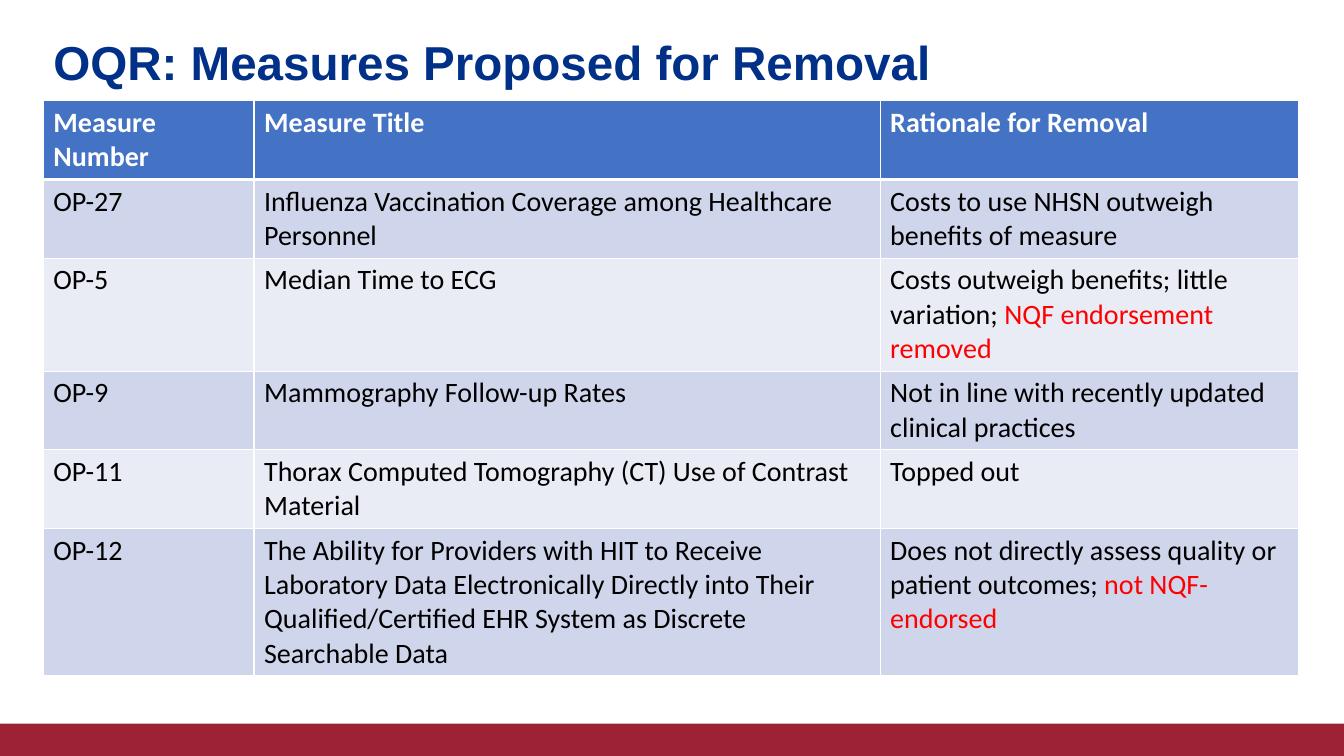
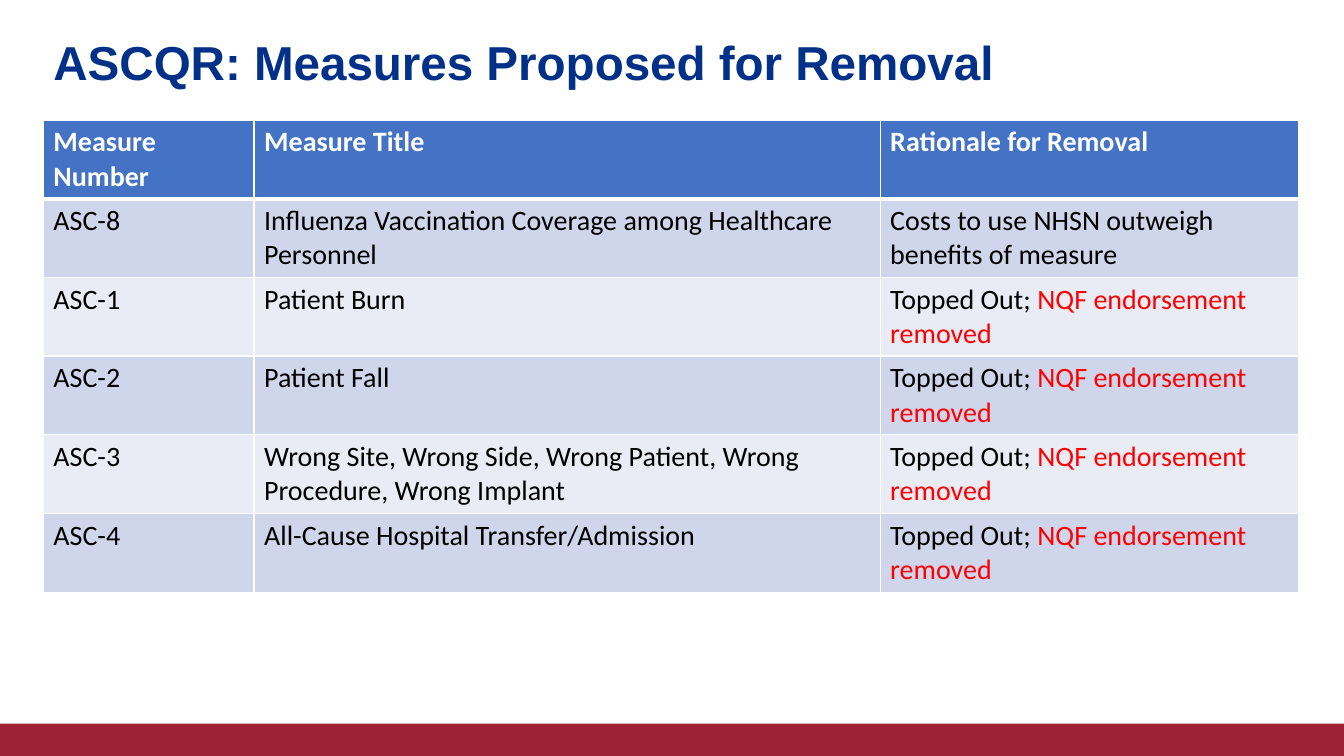
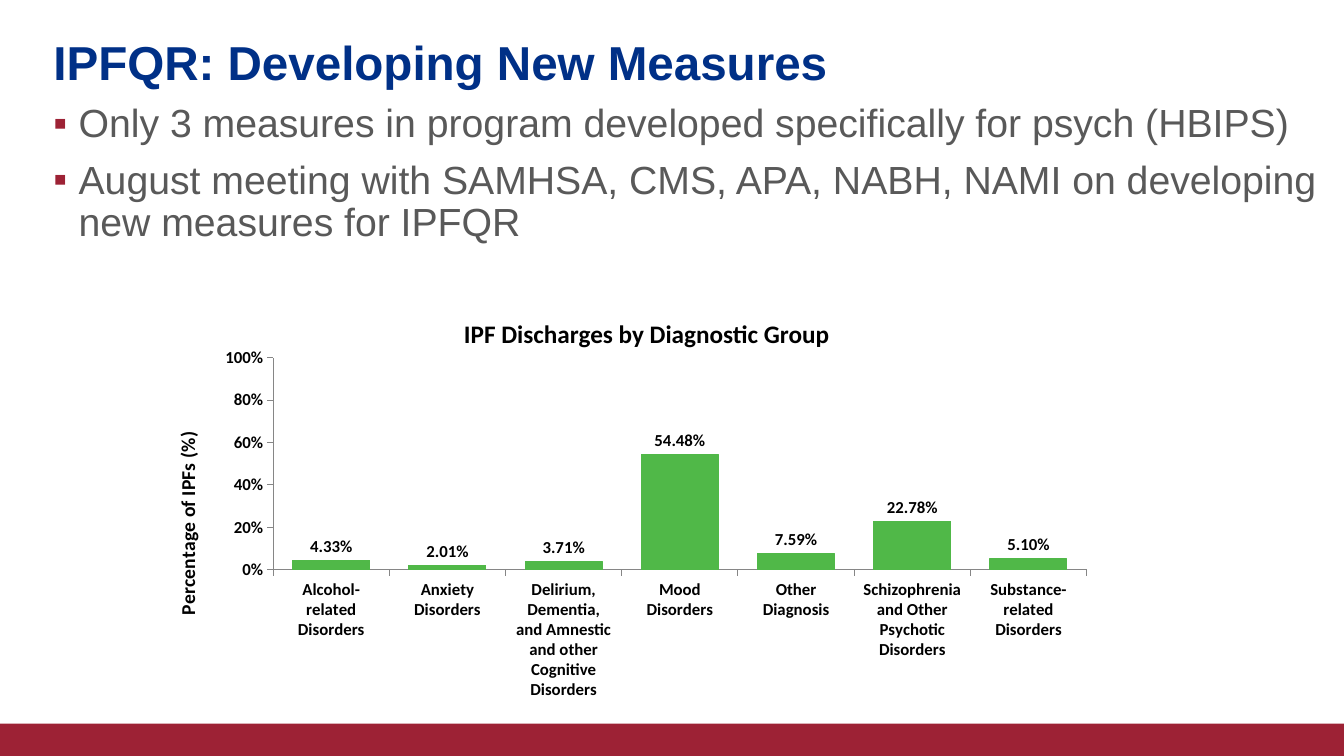
"""Build three slides on quality measures proposed for removal and development."""
from lxml import etree
from pptx import Presentation
from pptx.chart.data import CategoryChartData
from pptx.dml.color import RGBColor
from pptx.enum.chart import XL_CHART_TYPE as ChartType, XL_LABEL_POSITION as LabelPosition
from pptx.enum.chart import XL_TICK_MARK as TickMark
from pptx.enum.shapes import MSO_SHAPE as Shape
from pptx.enum.text import MSO_ANCHOR as Anchor, MSO_AUTO_SIZE as AutoSize, PP_ALIGN as Align
from pptx.oxml import parse_xml
from pptx.oxml.ns import nsdecls, qn
from pptx.util import Inches, Pt

COLORS = {
    "band": "9D2235", "title": "003087", "body": "595959", "header": "4472C4",
    "odd": "CFD5EA", "even": "E9EBF5", "white": "FFFFFF", "black": "000000",
    "alert": "FF0000", "bar": "50B848", "axis": "868686",
}
TITLE_ONLY, TITLE_AND_BODY = 5, 1
LEFT = 0.43
COLUMN_WIDTHS = (2.09, 6.21, 4.15)
ROW_HEIGHT = 0.41
HEADINGS = ("Measure Number", "Measure Title", "Rationale for Removal")
FLU_TITLE = "Influenza Vaccination Coverage among Healthcare Personnel"
FLU_REASON = "Costs to use NHSN outweigh benefits of measure"
TOPPED_OUT = ("Topped Out; ", "NQF endorsement removed")

OQR_ROWS = [
    ("OP-27", FLU_TITLE, FLU_REASON),
    ("OP-5", "Median Time to ECG",
     ("Costs outweigh benefits; little variation; ", "NQF endorsement removed")),
    ("OP-9", "Mammography Follow-up Rates", "Not in line with recently updated clinical practices"),
    ("OP-11", "Thorax Computed Tomography (CT) Use of Contrast Material", "Topped out"),
    ("OP-12",
     "The Ability for Providers with HIT to Receive Laboratory Data Electronically Directly "
     "into Their Qualified/Certified EHR System as Discrete Searchable Data",
     ("Does not directly assess quality or patient outcomes; ", "not NQF-endorsed")),
]
ASCQR_ROWS = [
    ("ASC-8", FLU_TITLE, FLU_REASON),
    ("ASC-1", "Patient Burn", TOPPED_OUT),
    ("ASC-2", "Patient Fall", TOPPED_OUT),
    ("ASC-3", "Wrong Site, Wrong Side, Wrong Patient, Wrong Procedure, Wrong Implant", TOPPED_OUT),
    ("ASC-4", "All-Cause Hospital Transfer/Admission", TOPPED_OUT),
]
DISCHARGES = {
    "Alcohol-\nrelated\nDisorders": 0.0433,
    "Anxiety\nDisorders": 0.0201,
    "Delirium,\nDementia,\nand Amnestic\nand other\nCognitive\nDisorders": 0.0371,
    "Mood\nDisorders": 0.5448,
    "Other\nDiagnosis": 0.0759,
    "Schizophrenia\nand Other\nPsychotic\nDisorders": 0.2278,
    "Substance-\nrelated\nDisorders": 0.051,
}


def rgb(name):
    """Return the named colour."""
    return RGBColor.from_string(COLORS[name])


def style(font, size, color, name="Calibri", bold=False):
    """Set the look of a font."""
    font.size, font.name, font.bold = Pt(size), name, bold
    font.color.rgb = rgb(color)


def place(shape, left, top, width, height):
    """Move and size a shape, in inches."""
    shape.left, shape.top = Inches(left), Inches(top)
    shape.width, shape.height = Inches(width), Inches(height)


class Deck:
    """Hold the presentation, its style and the current slide."""

    def __init__(self):
        """Start an empty wide presentation."""
        self.deck = Presentation()
        self.deck.slide_width, self.deck.slide_height = Inches(13.33), Inches(7.5)
        self.page = None

    def add_page(self, layout, title):
        """Add a slide with the bottom band and a title."""
        self.page = self.deck.slides.add_slide(self.deck.slide_layouts[layout])
        band = self.page.shapes.add_shape(
            Shape.RECTANGLE, 0, Inches(7.18), self.deck.slide_width, Inches(0.32))
        band.shadow.inherit = False
        band.fill.solid()
        band.fill.fore_color.rgb = rgb("band")
        band.line.fill.background()
        box = self.page.shapes.title
        place(box, LEFT, 0.32, 11.5, 0.65)
        frame = box.text_frame
        frame.text = title
        frame.auto_size, frame.vertical_anchor = AutoSize.NONE, Anchor.MIDDLE
        para = frame.paragraphs[0]
        para.alignment, para.line_spacing = Align.LEFT, 0.9
        style(para.font, 34, "title", "Arial", True)

    def add_bullets(self, lines):
        """Fill the body placeholder with square bullets."""
        box = self.page.placeholders[1]
        place(box, LEFT, 0.98, 12.9, 1.98)
        frame = box.text_frame
        frame.auto_size = AutoSize.NONE
        frame.text = "\n".join(lines)
        for index, para in enumerate(frame.paragraphs):
            para.line_spacing = 0.9
            para.space_before = Pt(10 if index else 0)
            props = para._p.get_or_add_pPr()
            props.set("marL", str(Inches(0.25)))
            props.set("indent", str(Inches(-0.25)))
            color = etree.SubElement(props, qn("a:buClr"))
            etree.SubElement(color, qn("a:srgbClr"), val=COLORS["band"])
            etree.SubElement(props, qn("a:buFont"), typeface="Arial")
            etree.SubElement(props, qn("a:buChar"), char="▪")
            style(para.font, 28, "body", "Arial")

    def add_measures(self, top, rows):
        """Add a table of measures under the shared headings."""
        grid = [HEADINGS, *rows]
        table = self.page.shapes.add_table(
            len(grid), len(HEADINGS), Inches(LEFT), Inches(top),
            Inches(sum(COLUMN_WIDTHS)), Inches(ROW_HEIGHT * len(grid))).table
        for column, width in zip(table.columns, COLUMN_WIDTHS):
            column.width = Inches(width)
        for index, values in enumerate(grid):
            table.rows[index].height = Inches(ROW_HEIGHT)
            fill = ("odd" if index % 2 else "even") if index else "header"
            for cell, value in zip(table.rows[index].cells, values):
                self.fill_cell(cell, value, fill, index)

    def fill_cell(self, cell, value, fill, index):
        """Write one cell; the second part of a pair is an alert."""
        props = cell._tc.get_or_add_tcPr()
        for side in ("lnL", "lnR", "lnT", "lnB"):
            heavy = (index == 0 and side == "lnB") or (index == 1 and side == "lnT")
            line = etree.SubElement(props, qn(f"a:{side}"), w=str(Pt(3 if heavy else 1)))
            solid = etree.SubElement(line, qn("a:solidFill"))
            etree.SubElement(solid, qn("a:srgbClr"), val=COLORS["white"])
        cell.fill.solid()
        cell.fill.fore_color.rgb = rgb(fill)
        para = cell.text_frame.paragraphs[0]
        style(para.font, 20, "black" if index else "white", bold=index == 0)
        parts = (value,) if isinstance(value, str) else value
        for part, text in enumerate(parts):
            span = para.add_run()
            span.text = text
            if part:
                span.font.color.rgb = rgb("alert")

    def add_column_chart(self, values, axis_title):
        """Add a column chart of shares."""
        data = CategoryChartData(number_format="0.00%")
        data.categories = list(values)
        data.add_series("Series 1", list(values.values()))
        chart = self.page.shapes.add_chart(
            ChartType.COLUMN_CLUSTERED, Inches(1.45), Inches(3.35),
            Inches(9.47), Inches(3.75), data).chart
        chart.has_title = chart.has_legend = False
        style(chart.font, 10, "black", bold=True)
        for axis in (chart.category_axis, chart.value_axis):
            axis.has_major_gridlines = False
            axis.major_tick_mark, axis.minor_tick_mark = TickMark.OUTSIDE, TickMark.NONE
            axis.format.line.color.rgb = rgb("axis")
            axis.format.line.width = Pt(0.75)
            style(axis.tick_labels.font, 12, "black", bold=True)
        scale = chart.value_axis
        scale.minimum_scale, scale.maximum_scale, scale.major_unit = 0, 1, 0.2
        scale.tick_labels.number_format = "0%"
        scale.tick_labels.number_format_is_linked = False
        scale.axis_title.text_frame.text = axis_title
        style(scale.axis_title.text_frame.paragraphs[0].font, 14, "black", bold=True)
        plot = chart.plots[0]
        plot.gap_width, plot.overlap, plot.vary_by_categories = 51, 100, False
        series = plot.series[0]
        series.format.fill.solid()
        series.format.fill.fore_color.rgb = rgb("bar")
        series.format.line.color.rgb = rgb("bar")
        series.format.line.width = Pt(0.75)
        labels = series.data_labels
        labels.show_value, labels.position = True, LabelPosition.OUTSIDE_END
        labels.number_format, labels.number_format_is_linked = "0.00%", False
        style(labels.font, 12, "black", bold=True)
        self.set_plot_area(chart, x=0.133, y=0.053, w=0.852, h=0.561)

    def set_plot_area(self, chart, **sizes):
        """Fix the inner plot area as fractions of the chart."""
        modes = '<c:xMode val="edge"/><c:yMode val="edge"/>'
        places = "".join(f'<c:{key} val="{size}"/>' for key, size in sizes.items())
        area = chart._chartSpace.find(".//" + qn("c:plotArea"))
        for old in area.findall(qn("c:layout")):
            area.remove(old)
        area.insert(0, parse_xml(
            f'<c:layout {nsdecls("c")}><c:manualLayout><c:layoutTarget val="inner"/>'
            f"{modes}{places}</c:manualLayout></c:layout>"))

    def add_caption(self, text, left, top, width, height):
        """Add a centred bold caption."""
        box = self.page.shapes.add_textbox(
            Inches(left), Inches(top), Inches(width), Inches(height))
        box.text_frame.word_wrap = True
        box.text_frame.text = text
        para = box.text_frame.paragraphs[0]
        para.alignment = Align.CENTER
        style(para.font, 18, "black", bold=True)


def main():
    """Build and save the slides."""
    slides = Deck()
    slides.add_page(TITLE_ONLY, "OQR: Measures Proposed for Removal")
    slides.add_measures(1, OQR_ROWS)
    slides.add_page(TITLE_ONLY, "ASCQR: Measures Proposed for Removal")
    slides.add_measures(1.19, ASCQR_ROWS)
    slides.add_page(TITLE_AND_BODY, "IPFQR: Developing New Measures")
    slides.add_bullets([
        "Only 3 measures in program developed specifically for psych (HBIPS)",
        "August meeting with SAMHSA, CMS, APA, NABH, NAMI on developing new measures for IPFQR",
    ])
    slides.add_column_chart(DISCHARGES, "Percentage of IPFs (%)")
    slides.add_caption("IPF Discharges by Diagnostic Group", 4.1, 3.11, 4.63, 0.4)
    slides.deck.save("out.pptx")


if __name__ == "__main__":
    main()
